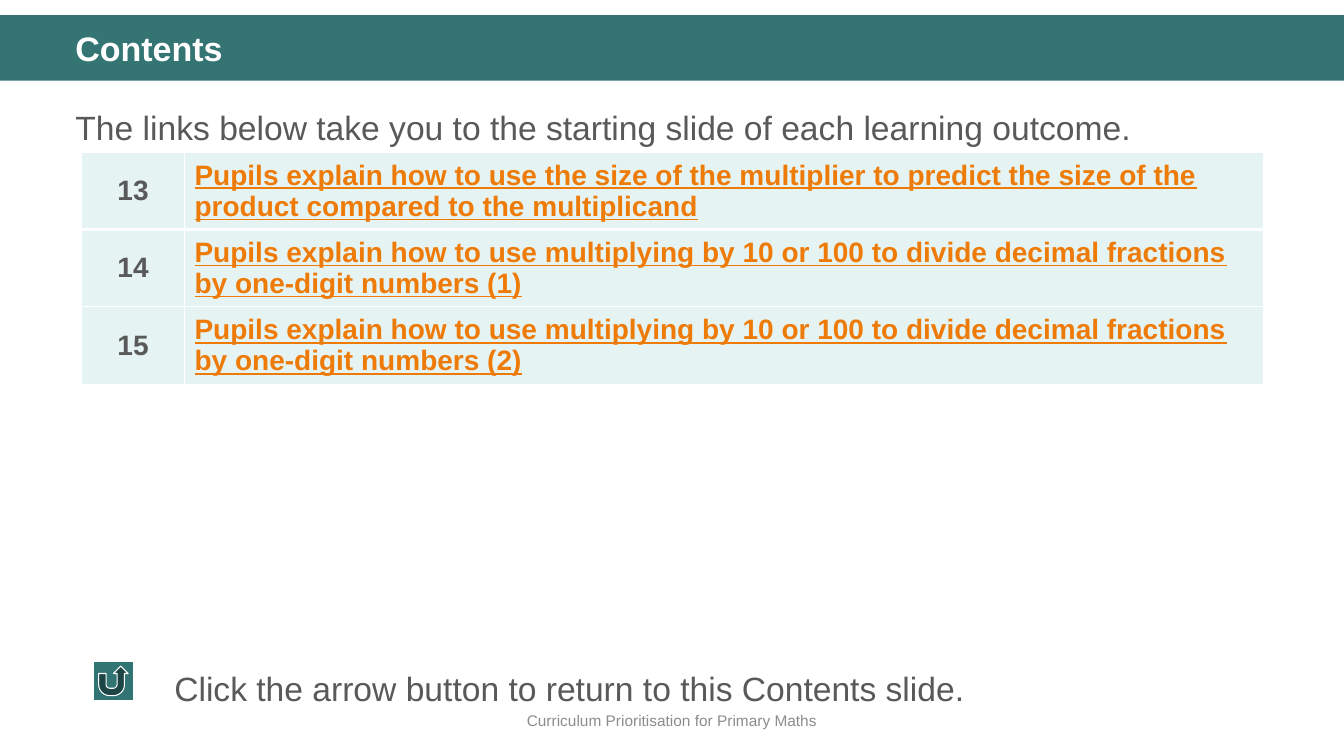
from lxml import etree
from pptx import Presentation
from pptx.dml.color import RGBColor
from pptx.enum.shapes import MSO_SHAPE
from pptx.enum.text import MSO_ANCHOR, PP_ALIGN
from pptx.oxml.ns import qn
from pptx.util import Inches, Pt

RECT, RETURN_BUTTON = MSO_SHAPE.RECTANGLE, MSO_SHAPE.ACTION_BUTTON_RETURN
TOP, MIDDLE = MSO_ANCHOR.TOP, MSO_ANCHOR.MIDDLE
LEFT, CENTER = PP_ALIGN.LEFT, PP_ALIGN.CENTER
FONT = "Arial"
TEAL = RGBColor(0x34, 0x75, 0x74)
BUTTON_TEAL = RGBColor(0x32, 0x74, 0x73)
PALE = RGBColor(0xE5, 0xF3, 0xF2)
ORANGE = RGBColor(0xEE, 0x7B, 0x08)
TEXT_GREY = RGBColor(0x59, 0x59, 0x59)
FOOTER_GREY = RGBColor(0x8C, 0x8C, 0x8C)
WHITE = RGBColor(0xFF, 0xFF, 0xFF)

TITLE = "Contents"
INTRO = "The links below take you to the starting slide of each learning outcome."
HINT = "Click the arrow button to return to this Contents slide."
FOOTER = "Curriculum Prioritisation for Primary Maths"
OUTCOMES = [
    ("13", "Pupils explain how to use the size of the multiplier to predict the size of the product compared to the multiplicand"),
    ("14", "Pupils explain how to use multiplying by 10 or 100 to divide decimal fractions by one-digit numbers (1)"),
    ("15", "Pupils explain how to use multiplying by 10 or 100 to divide decimal fractions by one-digit numbers (2)"),
]
COL_WIDTHS = (1.02, 10.7)
ROW_HEIGHT = 0.72


def write(tf, text, size, color, align=LEFT, bold=False, underline=False, spacing=None):
    p = tf.paragraphs[0]
    p.alignment = align
    if spacing:
        p.line_spacing = spacing
    r = p.add_run()
    r.text = text
    r.font.name, r.font.size = FONT, Pt(size)
    r.font.bold, r.font.underline = bold, underline
    r.font.color.rgb = color


def add_text(s, box, text, size, color, anchor=TOP, **style):
    tf = s.shapes.add_textbox(*map(Inches, box)).text_frame
    tf.word_wrap = True
    tf.vertical_anchor = anchor
    write(tf, text, size, color, **style)


def add_block(s, kind, box, color):
    sp = s.shapes.add_shape(kind, *map(Inches, box))
    sp.shadow.inherit = False
    sp.fill.solid()
    sp.fill.fore_color.rgb = color
    sp.line.fill.background()
    return sp


def set_borders(cell, widths):
    tcPr = cell._tc.get_or_add_tcPr()
    for i, (side, width) in enumerate(widths.items()):
        ln = etree.Element(qn(f"a:ln{side}"), w=str(Pt(width)))
        fill = etree.SubElement(ln, qn("a:solidFill"))
        etree.SubElement(fill, qn("a:srgbClr"), val=str(WHITE))
        tcPr.insert(i, ln)


def add_outcomes(s):
    rows = len(OUTCOMES)
    box = (0.81, 1.51, sum(COL_WIDTHS), rows * ROW_HEIGHT)
    table = s.shapes.add_table(rows, len(COL_WIDTHS), *map(Inches, box)).table
    for column, width in zip(table.columns, COL_WIDTHS):
        column.width = Inches(width)
    for i, outcome in enumerate(OUTCOMES):
        table.rows[i].height = Inches(ROW_HEIGHT)
        for j, text in enumerate(outcome):
            cell = table.cell(i, j)
            cell.vertical_anchor = MIDDLE
            cell.fill.solid()
            cell.fill.fore_color.rgb = PALE
            set_borders(cell, {"L": 1, "R": 1, "T": 3 if i == 1 else 1, "B": 3 if i == 0 else 1})
            write(cell.text_frame, text, 20, ORANGE if j else TEXT_GREY,
                  align=LEFT if j else CENTER, bold=True, underline=bool(j))


def main():
    prs = Presentation()
    prs.slide_width, prs.slide_height = Inches(13.33), Inches(7.5)
    s = prs.slides.add_slide(prs.slide_layouts[6])
    add_block(s, RECT, (0, 0.15, 13.33, 0.65), TEAL)
    add_text(s, (0, 6.95, 13.33, 0.4), FOOTER, 11, FOOTER_GREY, anchor=MIDDLE, align=CENTER)
    add_text(s, (0.65, 0.93, 12.18, 0.56), INTRO, 24, TEXT_GREY, spacing=1.2)
    add_outcomes(s)
    button = add_block(s, RETURN_BUTTON, (0.93, 6.56, 0.39, 0.39), BUTTON_TEAL)
    button.line.color.rgb = WHITE
    button.line.width = Pt(0.75)
    add_text(s, (1.63, 6.58, 11.32, 0.5), HINT, 24, TEXT_GREY)
    add_text(s, (0.65, 0.27, 12.18, 0.47), TITLE, 24.3, WHITE, bold=True, spacing=0.9)
    prs.save("out.pptx")


if __name__ == "__main__":
    main()
